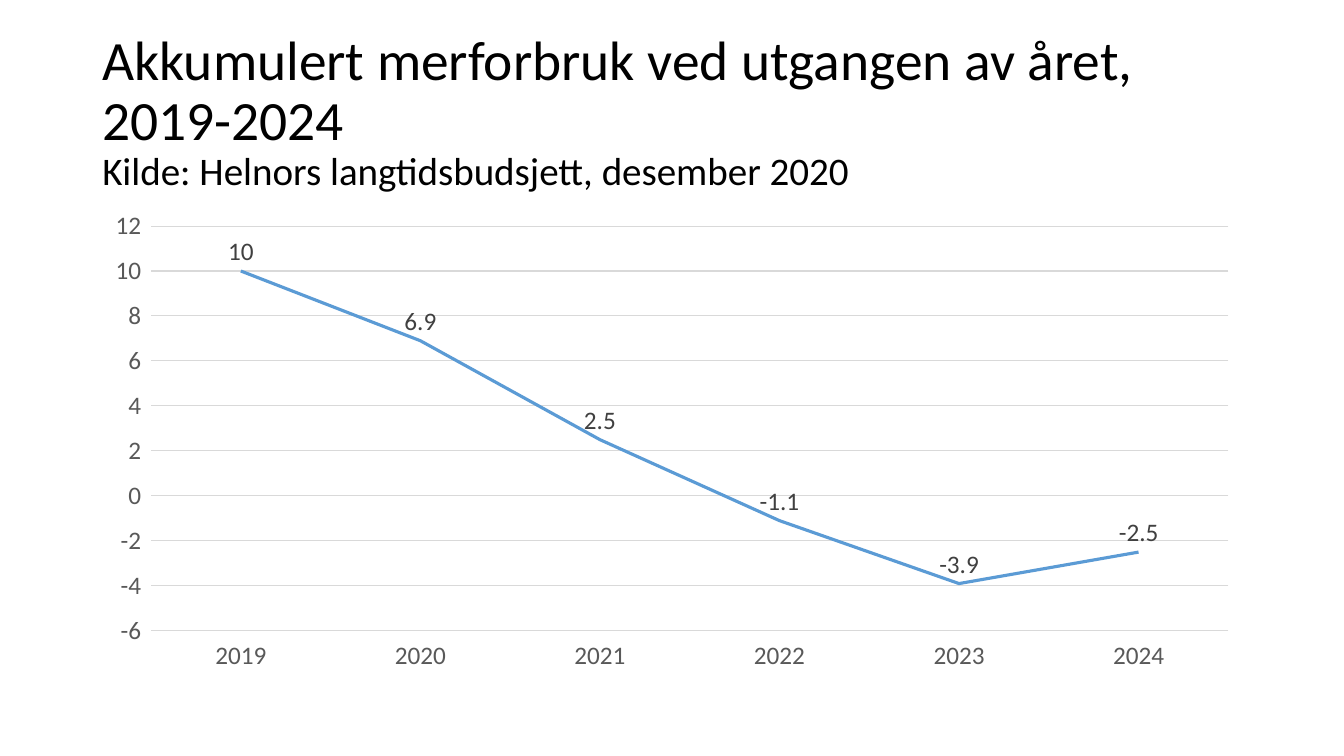
from dataclasses import dataclass

from pptx import Presentation
from pptx.chart.data import CategoryChartData
from pptx.dml.color import RGBColor
from pptx.enum.chart import (XL_CHART_TYPE, XL_LABEL_POSITION, XL_MARKER_STYLE,
                             XL_TICK_LABEL_POSITION, XL_TICK_MARK)
from pptx.enum.text import MSO_ANCHOR
from pptx.util import Pt


@dataclass(frozen=True)
class Theme:
    font: str = "Calibri"
    title_size: float = 39.6
    source_size: float = 27.9
    chart_size: float = 18
    title_color: str = "000000"
    axis_color: str = "595959"
    label_color: str = "404040"
    grid_color: str = "D9D9D9"
    series_color: str = "5B9BD5"


THEME = Theme()
LEFT, WIDTH = 66, 828
OVERSPEND = {"2019": 10, "2020": 6.9, "2021": 2.5,
             "2022": -1.1, "2023": -3.9, "2024": -2.5}


def style_font(font, size, color):
    font.name = THEME.font
    font.size = Pt(size)
    font.color.rgb = RGBColor.from_string(color)


def style_line(line, width, color):
    line.width = Pt(width)
    line.color.rgb = RGBColor.from_string(color)


def add_heading(slide, title, source):
    """Add the title with its source on a smaller line below."""
    heading = slide.shapes.add_textbox(Pt(LEFT), Pt(28.75), Pt(WIDTH), Pt(104.4))
    frame = heading.text_frame
    frame.word_wrap = True
    frame.vertical_anchor = MSO_ANCHOR.MIDDLE
    paragraph = frame.paragraphs[0]
    paragraph.text = f"{title}\v{source}"
    paragraph.line_spacing = 0.9
    for run, size in zip(paragraph.runs, (THEME.title_size, THEME.source_size)):
        style_font(run.font, size, THEME.title_color)


def style_axis(axis):
    axis.major_tick_mark = axis.minor_tick_mark = XL_TICK_MARK.NONE
    axis.tick_label_position = XL_TICK_LABEL_POSITION.LOW
    style_font(axis.tick_labels.font, THEME.chart_size, THEME.axis_color)


def style_series(series):
    series.smooth = False
    series.marker.style = XL_MARKER_STYLE.NONE
    style_line(series.format.line, 2.25, THEME.series_color)
    labels = series.data_labels
    labels.show_value = True
    labels.position = XL_LABEL_POSITION.ABOVE
    style_font(labels.font, THEME.chart_size, THEME.label_color)


def add_line_chart(slide, name, values):
    data = CategoryChartData()
    data.categories = list(values)
    data.add_series(name, list(values.values()))
    chart = slide.shapes.add_chart(XL_CHART_TYPE.LINE, Pt(LEFT), Pt(143.75),
                                   Pt(WIDTH), Pt(342.6), data).chart
    chart.has_title = False
    chart.has_legend = False
    style_font(chart.font, THEME.chart_size, THEME.axis_color)
    chart.plots[0].vary_by_categories = False

    years, amounts = chart.category_axis, chart.value_axis
    style_axis(years)
    style_line(years.format.line, 0.75, THEME.grid_color)
    style_axis(amounts)
    amounts.minimum_scale, amounts.maximum_scale = -6, 12
    amounts.major_unit = 2
    amounts.format.line.fill.background()
    amounts.has_major_gridlines = True
    style_line(amounts.major_gridlines.format.line, 0.75, THEME.grid_color)
    style_series(chart.plots[0].series[0])


def main():
    presentation = Presentation()
    presentation.slide_width, presentation.slide_height = Pt(960), Pt(540)
    slide = presentation.slides.add_slide(presentation.slide_layouts[6])
    add_heading(slide, "Akkumulert merforbruk ved utgangen av året, 2019-2024",
                "Kilde: Helnors langtidsbudsjett, desember 2020")
    add_line_chart(slide, "Series 1", OVERSPEND)
    presentation.save("out.pptx")


if __name__ == "__main__":
    main()
